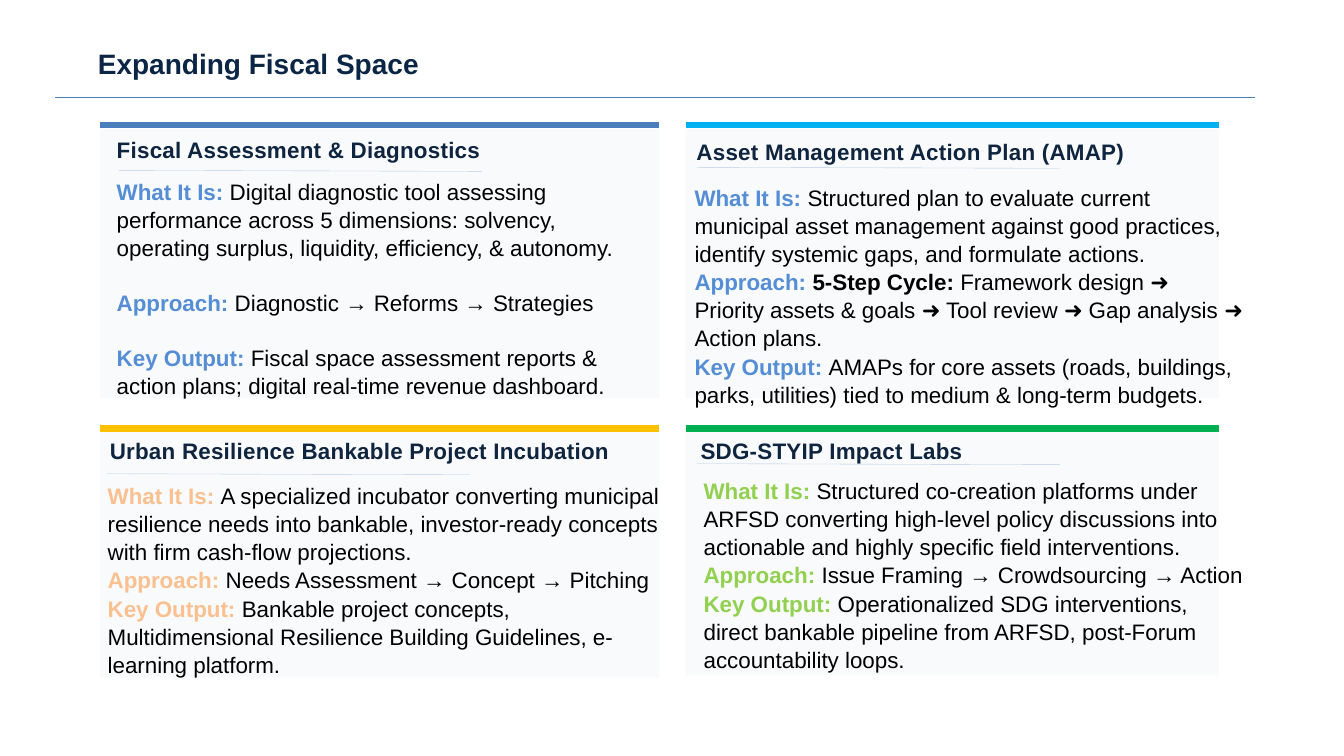
from pptx import Presentation, util as u
from pptx.dml.color import RGBColor
from pptx.enum import shapes, text
from pptx.oxml.ns import qn

PX = 9144
FONT = "Arial"
COLORS = {
    "title": "0B2545", "heading": "0F243E", "body": "000000", "panel": "F8FAFC",
    "rule": "4B7EBC", "underline": "B9CDE5",
    "blue": "4B7EBC", "cyan": "00B0F0", "amber": "FFC000", "green": "00B050",
    "blue_label": "558ED5", "peach_label": "FAC090", "lime_label": "92D050",
}
LABELS = ("What It Is: ", "Approach: ", "Key Output: ")

CARDS = [
    dict(panel=(99, 128, 555, 267), band="blue", label="blue_label", gap=19.3,
         heading="Fiscal Assessment & Diagnostics", heading_box=(106, 130, 470, 37),
         underline=(118, 169), body_box=(106, 170, 536, 252),
         body=("Digital diagnostic tool assessing performance across 5 dimensions: "
               "solvency, operating surplus, liquidity, efficiency, & autonomy.",
               "Diagnostic* → *Reforms* →* Strategies",
               "Fiscal space assessment reports & action plans; "
               "digital real-time revenue dashboard.")),
    dict(panel=(680, 128, 529, 267), band="cyan", label="blue_label", gap=0,
         heading="Asset Management Action Plan (AMAP)", heading_box=(681, 132, 470, 37),
         underline=(691, 166), body_box=(679, 176, 565, 226),
         body=("Structured plan to evaluate current municipal asset management against "
               "good practices, identify systemic gaps, and formulate actions.",
               "*5-Step Cycle:* Framework design ➜ Priority assets & goals ➜ "
               "Tool review ➜ Gap analysis ➜ Action plans.",
               "AMAPs for core assets (roads, buildings, parks, utilities) "
               "tied to medium & long-term budgets.")),
    dict(panel=(99, 429, 555, 243), band="amber", label="peach_label", gap=0,
         heading="Urban Resilience Bankable Project Incubation",
         heading_box=(99, 429, 539, 37),
         underline=(106, 470), body_box=(97, 472, 570, 226),
         body=("A specialized incubator converting municipal resilience needs into "
               "bankable, investor-ready concepts with firm cash-flow projections.",
               "Needs Assessment* → *Concept* →* Pitching",
               "Bankable project concepts, Multidimensional Resilience Building "
               "Guidelines, e-learning platform.")),
    dict(panel=(680, 429, 529, 241), band="green", label="lime_label", gap=0,
         heading="SDG-STYIP Impact Labs", heading_box=(685, 429, 470, 37),
         underline=(691, 460), body_box=(688, 467, 555, 226),
         body=("Structured co-creation platforms under ARFSD converting high-level "
               "policy discussions into actionable and highly specific field "
               "interventions.",
               "Issue Framing* →* Crowdsourcing* →* Action",
               "Operationalized SDG interventions, direct bankable pipeline from "
               "ARFSD, post-Forum accountability loops.")),
]


def px(*lengths):
    return [u.Emu(length * PX) for length in lengths]


def rgb(name):
    return RGBColor.from_string(COLORS[name])


def add_line(parent, start, end, color, width):
    line = parent.add_connector(shapes.MSO_CONNECTOR.STRAIGHT, *px(*start, *end))
    line.line.color.rgb = rgb(color)
    line.line.width = u.Pt(width)
    properties = line._element.spPr
    properties.append(properties.makeelement(qn("a:effectLst"), {}))


def write_run(paragraph, words, *, size=16, color="body", bold=False, tracking=0):
    run = paragraph.add_run()
    run.text = words
    run.font.name = FONT
    run.font.size = u.Pt(size)
    run.font.bold = bold
    run.font.color.rgb = rgb(color)
    if tracking:
        run.font._element.set("spc", str(tracking))


def prepare_frame(holder):
    frame = holder.text_frame
    frame.word_wrap = True
    frame.auto_size = text.MSO_AUTO_SIZE.SHAPE_TO_FIT_TEXT
    frame.vertical_anchor = text.MSO_ANCHOR.TOP
    return frame


def add_title(slide, words):
    title = slide.shapes.title
    title.left, title.top, title.width, title.height = px(97, 46, 850, 34)
    frame = prepare_frame(title)
    frame.margin_left = frame.margin_top = frame.margin_right = frame.margin_bottom = 0
    frame.paragraphs[0].alignment = text.PP_ALIGN.LEFT
    write_run(frame.paragraphs[0], words, size=20, color="title", bold=True)


def add_panel(slide, box, band):
    left, top, width, height = box
    group = slide.shapes.add_group_shape()
    panel = group.shapes.add_shape(shapes.MSO_SHAPE.RECTANGLE, *px(*box))
    panel.shadow.inherit = False
    panel.fill.solid()
    panel.fill.fore_color.rgb = rgb("panel")
    panel.line.fill.background()
    add_line(group.shapes, (left, top - 4), (left + width, top - 4), band, 4.5)


def add_heading(slide, words, box, underline):
    frame = prepare_frame(slide.shapes.add_textbox(*px(*box)))
    write_run(frame.paragraphs[0], words, color="heading", bold=True, tracking=20)
    left, top = underline
    add_line(slide.shapes, (left, top), (left + 360, top + 1), "underline", 0.25)


def add_body(slide, entries, box, label_color, gap):
    frame = prepare_frame(slide.shapes.add_textbox(*px(*box)))
    for index, (label, entry) in enumerate(zip(LABELS, entries)):
        paragraph = frame.add_paragraph() if index else frame.paragraphs[0]
        paragraph.line_spacing = 1.05
        if index and gap:
            paragraph.space_before = u.Pt(gap)
        write_run(paragraph, label, color=label_color, bold=True)
        for position, part in enumerate(entry.split("*")):
            if part:
                write_run(paragraph, part, bold=position % 2 == 1)


def main():
    deck = Presentation()
    deck.slide_width, deck.slide_height = px(1333, 750)
    slide = deck.slides.add_slide(deck.slide_layouts[5])
    add_title(slide, "Expanding Fiscal Space")
    add_line(slide.shapes, (55, 97), (1245, 97), "rule", 0.75)
    for card in CARDS:
        add_panel(slide, card["panel"], card["band"])
    for card in CARDS:
        add_heading(slide, card["heading"], card["heading_box"], card["underline"])
        add_body(slide, card["body"], card["body_box"], card["label"], card["gap"])
    deck.save("out.pptx")


if __name__ == "__main__":
    main()
